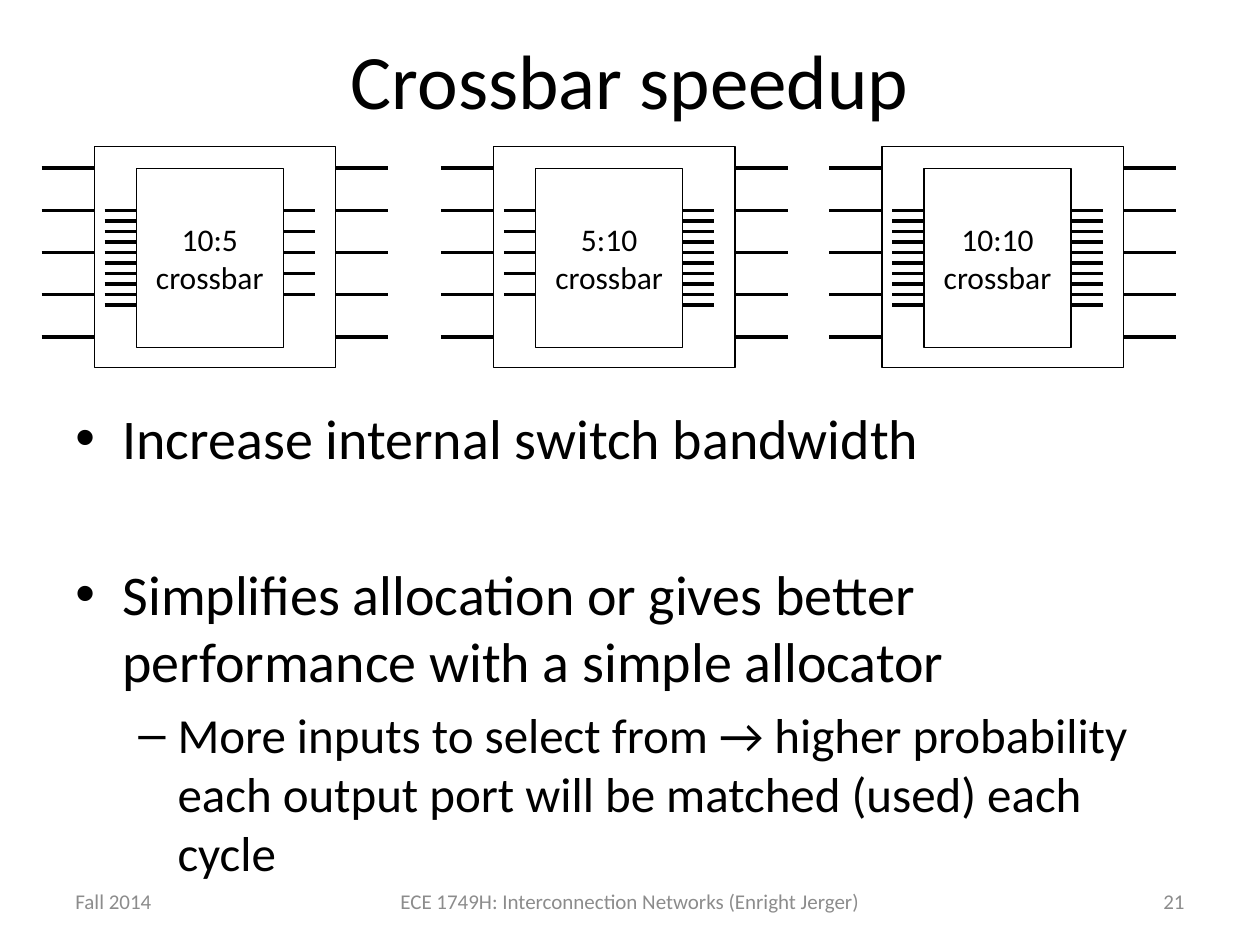
"""Build the slide on crossbar speedup with three switch diagrams."""
from dataclasses import dataclass

from lxml import etree
from pptx import Presentation
from pptx.dml.color import RGBColor
from pptx.enum.shapes import MSO_CONNECTOR, MSO_SHAPE
from pptx.enum.text import MSO_ANCHOR, PP_ALIGN
from pptx.oxml.ns import qn
from pptx.shapes.autoshape import Shape
from pptx.slide import Slide
from pptx.util import Cm, Pt

LEFT, CENTER, RIGHT = PP_ALIGN.LEFT, PP_ALIGN.CENTER, PP_ALIGN.RIGHT
TOP, MIDDLE = MSO_ANCHOR.TOP, MSO_ANCHOR.MIDDLE
RECTANGLE = MSO_SHAPE.RECTANGLE
STRAIGHT = MSO_CONNECTOR.STRAIGHT


@dataclass(frozen=True)
class Theme:
    font: str = "Calibri"
    ink: RGBColor = RGBColor(0, 0, 0)
    muted: RGBColor = RGBColor(0x8C, 0x8C, 0x8C)
    title: float = 44
    body: float = 32
    detail: float = 28
    label: float = 18
    footer: float = 12
    outline: float = 0.75
    wire: float = 2


@dataclass(frozen=True)
class Box:
    left: float
    top: float
    width: float
    height: float

    @property
    def right(self) -> float:
        return self.left + self.width

    def lengths(self) -> tuple[Cm, Cm, Cm, Cm]:
        return Cm(self.left), Cm(self.top), Cm(self.width), Cm(self.height)


@dataclass(frozen=True)
class Crossbar:
    left: float
    inputs: int
    outputs: int


@dataclass(frozen=True)
class Bullet:
    text: str
    mark: str
    size: float
    margin: float
    hanging: float
    space_before: float


@dataclass(frozen=True)
class Footer:
    text: str
    left: float
    width: float
    align: PP_ALIGN


THEME = Theme()
PORT_COUNT = 5
PORT_TOP, PORT_PITCH, PORT_LENGTH = 3.39, 0.85, 1.06
LANE_TOP, LANE_SPAN, LANE_LENGTH = 4.24, 2.12, 0.64

CROSSBARS = (
    Crossbar(1.9, 10, 5),
    Crossbar(9.95, 5, 10),
    Crossbar(17.78, 10, 10),
)
BULLETS = (
    Bullet("Increase internal switch bandwidth", "•", THEME.body, 0.95, 0.95, 0),
    Bullet("Simplifies allocation or gives better performance with a simple allocator",
           "•", THEME.body, 0.95, 0.95, 51),
    Bullet("More inputs to select from → higher probability each output port "
           "will be matched (used) each cycle", "–", THEME.detail, 2.06, 0.79, 6),
)
FOOTERS = (
    Footer("Fall 2014", 1.27, 5.93, LEFT),
    Footer("ECE 1749H: Interconnection Networks (Enright Jerger)", 7.2, 11, CENTER),
    Footer("21", 18.2, 5.93, RIGHT),
)


def write_text(shape: Shape, text: str, *, size: float, color: RGBColor = THEME.ink,
               align: PP_ALIGN = LEFT, anchor: MSO_ANCHOR = MIDDLE,
               bullet: Bullet | None = None) -> None:
    """Add one formatted paragraph to a shape, filling its empty first one."""
    frame = shape.text_frame
    frame.word_wrap = True
    frame.vertical_anchor = anchor
    paragraph = frame.add_paragraph() if frame.text else frame.paragraphs[0]
    paragraph.alignment = align
    run = paragraph.add_run()
    run.text = text
    run.font.name = THEME.font
    run.font.size = Pt(size)
    run.font.color.rgb = color
    if bullet:
        paragraph.space_before = Pt(bullet.space_before)
        properties = paragraph._p.get_or_add_pPr()
        properties.set("marL", str(Cm(bullet.margin)))
        properties.set("indent", str(-Cm(bullet.hanging)))
        etree.SubElement(properties, qn("a:buFont")).set("typeface", "Arial")
        etree.SubElement(properties, qn("a:buChar")).set("char", bullet.mark)


def add_text_box(slide: Slide, box: Box) -> Shape:
    """Add an empty text box."""
    return slide.shapes.add_textbox(*box.lengths())


def add_outline(slide: Slide, box: Box) -> Shape:
    """Add an unfilled rectangle."""
    shape = slide.shapes.add_shape(RECTANGLE, *box.lengths())
    shape.shadow.inherit = False
    shape.fill.background()
    shape.line.color.rgb = THEME.ink
    shape.line.width = Pt(THEME.outline)
    return shape


def add_wires(slide: Slide, left: float, top: float, length: float,
              count: int, pitch: float) -> None:
    """Draw a stack of evenly spaced horizontal wires."""
    for index in range(count):
        height = Cm(top + index * pitch)
        wire = slide.shapes.add_connector(
            STRAIGHT, Cm(left), height, Cm(left + length), height)
        wire.line.color.rgb = THEME.ink
        wire.line.width = Pt(THEME.wire)
        etree.SubElement(wire._element.spPr, qn("a:effectLst"))


def add_crossbar(slide: Slide, crossbar: Crossbar) -> None:
    """Draw a switch with its ports, inner crossbar and lanes."""
    switch = Box(crossbar.left, 2.96, 4.87, 4.45)
    core = Box(crossbar.left + 0.85, 3.4, 2.96, 3.61)
    add_outline(slide, switch)
    for left in (switch.left - PORT_LENGTH, switch.right):
        add_wires(slide, left, PORT_TOP, PORT_LENGTH, PORT_COUNT, PORT_PITCH)
    write_text(add_outline(slide, core), f"{crossbar.inputs}:{crossbar.outputs} crossbar",
               size=THEME.label, align=CENTER)
    for left, count in ((core.left - LANE_LENGTH, crossbar.inputs),
                        (core.right, crossbar.outputs)):
        add_wires(slide, left, LANE_TOP, LANE_LENGTH, count, LANE_SPAN / count)


def main() -> None:
    """Build and save the presentation."""
    presentation = Presentation()
    presentation.slide_width, presentation.slide_height = Cm(25.4), Cm(19.05)
    slide = presentation.slides.add_slide(presentation.slide_layouts[6])

    title = add_text_box(slide, Box(1.27, 0, 22.86, 3.18))
    write_text(title, "Crossbar speedup", size=THEME.title, align=CENTER)

    body = add_text_box(slide, Box(1.27, 8, 22.86, 9.53))
    for bullet in BULLETS:
        write_text(body, bullet.text, size=bullet.size, anchor=TOP, bullet=bullet)

    for crossbar in CROSSBARS:
        add_crossbar(slide, crossbar)

    for footer in FOOTERS:
        shape = add_text_box(slide, Box(footer.left, 17.65, footer.width, 1.02))
        write_text(shape, footer.text, size=THEME.footer, color=THEME.muted,
                   align=footer.align)

    presentation.save("out.pptx")


if __name__ == "__main__":
    main()
